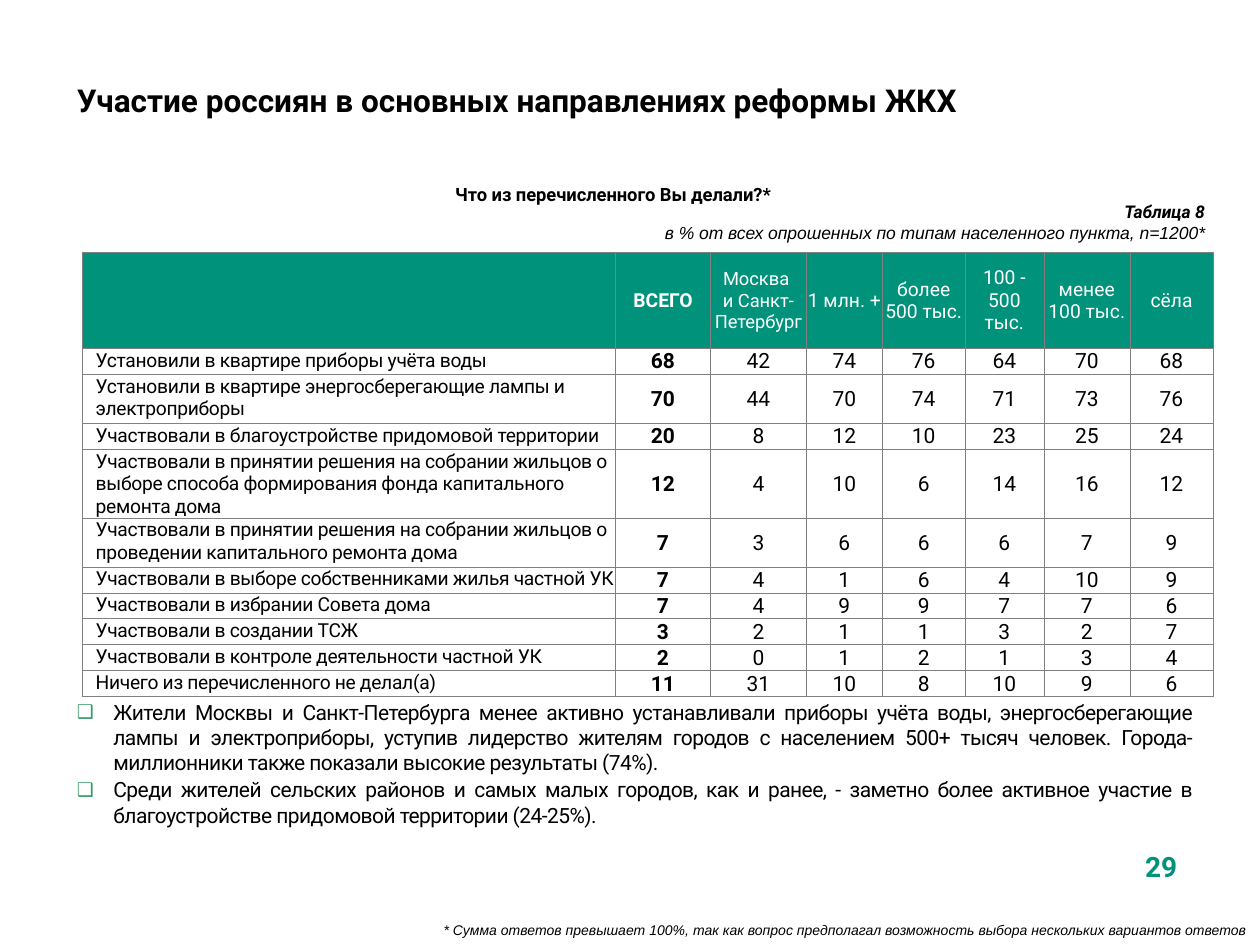
from lxml import etree
from pptx import Presentation
from pptx import util as u
from pptx.dml.color import RGBColor
from pptx.enum import text
from pptx.oxml import ns

COLUMNS, ROWS = 100, 75  # page grid
GREEN, BLACK, WHITE, GREY, LEAF = "00927B", "000000", "FFFFFF", "808080", "339966"
LEFT, CENTER, RIGHT, JUSTIFY = (text.PP_ALIGN.LEFT, text.PP_ALIGN.CENTER,
                                text.PP_ALIGN.RIGHT, text.PP_ALIGN.JUSTIFY)

TITLE = "Участие россиян в основных направлениях реформы ЖКХ"
HEADERS = ["", "ВСЕГО", "Москва \nи Санкт-Петербург", "1 млн. +", "более 500 тыс.",
           "100 - 500 тыс.", "менее 100 тыс.", "сёла"]
ANSWERS = [
    ("Установили в квартире приборы учёта воды", 68, 42, 74, 76, 64, 70, 68),
    ("Установили в квартире энергосберегающие лампы и электроприборы",
     70, 44, 70, 74, 71, 73, 76),
    ("Участвовали в благоустройстве придомовой территории", 20, 8, 12, 10, 23, 25, 24),
    ("Участвовали в принятии решения на собрании жильцов о выборе способа "
     "формирования фонда капитального ремонта дома", 12, 4, 10, 6, 14, 16, 12),
    ("Участвовали в принятии решения на собрании жильцов о проведении "
     "капитального ремонта дома", 7, 3, 6, 6, 6, 7, 9),
    ("Участвовали в выборе собственниками жилья частной УК", 7, 4, 1, 6, 4, 10, 9),
    ("Участвовали в избрании Совета дома", 7, 4, 9, 9, 7, 7, 6),
    ("Участвовали в создании ТСЖ", 3, 2, 1, 1, 3, 2, 7),
    ("Участвовали в контроле деятельности частной УК", 2, 0, 1, 2, 1, 3, 4),
    ("Ничего из перечисленного не делал(а)", 11, 31, 10, 8, 10, 9, 6),
]
TABLE_COLUMNS = [42.35, 7.55, 7.6, 6.05, 6.55, 6.25, 6.85, 6.6]
TABLE_ROWS = [7.63, 2, 3.9, 2, 3.9, 3.9, 2, 2, 2, 2, 2]
FINDINGS = [
    "Жители Москвы и Санкт-Петербурга менее активно устанавливали приборы учёта воды, "
    "энергосберегающие лампы и электроприборы, уступив лидерство жителям городов с "
    "населением 500+ тысяч человек. Города-миллионники также показали высокие "
    "результаты (74%).",
    "Среди жителей сельских районов и самых малых городов, как и ранее, - заметно более "
    "активное участие в благоустройстве придомовой территории (24-25%).",
]

deck = Presentation()
deck.slide_width, deck.slide_height = u.Inches(10), u.Inches(7.5)


def colour(value):
    return RGBColor.from_string(value)


def across(columns):
    return int(deck.slide_width * columns / COLUMNS)


def down(rows):
    return int(deck.slide_height * rows / ROWS)


def place(box):
    left, top, width, height = box
    return across(left), down(top), across(width), down(height)


def move(shape, box):
    shape.left, shape.top, shape.width, shape.height = place(box)


def assign(target, values):
    for name, value in values.items():
        setattr(target, name, value)


def write(para, words, align, size, ink=BLACK, spacing=0, **style):
    """Fill one paragraph with a single formatted run."""
    span = para.add_run()
    span.text = words
    para.alignment = align
    assign(span.font, {"name": "Roboto", "size": u.Pt(size), "bold": False, **style})
    span.font.color.rgb = colour(ink)
    if spacing:
        span.font._element.set("spc", str(round(spacing * 100)))


def paragraphs(frame, count):
    return [frame.paragraphs[0]] + [frame.add_paragraph() for _ in range(count - 1)]


def indent(para, left, first=0):
    props = para._p.get_or_add_pPr()
    props.set("marL", str(u.Inches(left)))
    props.set("indent", str(u.Inches(first)))
    return props


def add_title(page, box):
    title = page.shapes.title
    move(title, box)
    assign(title.text_frame, {"auto_size": text.MSO_AUTO_SIZE.NONE,
                              "vertical_anchor": text.MSO_ANCHOR.MIDDLE})
    write(title.text_frame.paragraphs[0], TITLE, LEFT, 18, bold=True)


def add_findings(page, box):
    body = page.placeholders[1]
    move(body, box)
    body.text_frame.auto_size = text.MSO_AUTO_SIZE.NONE
    bullet_parts = [("a:buSzPct", "val", "90000"), ("a:buFont", "typeface", "Arial"),
                    ("a:buChar", "char", "❑")]
    for index, (para, words) in enumerate(
            zip(paragraphs(body.text_frame, len(FINDINGS)), FINDINGS)):
        props = indent(para, 0.29, -0.29)
        bullet_colour = etree.SubElement(props, ns.qn("a:buClr"))
        etree.SubElement(bullet_colour, ns.qn("a:srgbClr")).set("val", LEAF)
        for tag, name, value in bullet_parts:
            etree.SubElement(props, ns.qn(tag)).set(name, value)
        para.space_before = u.Pt(1.2 if index else 0)
        write(para, words, JUSTIFY, 12, spacing=-0.3)


def add_label(page, box, lines, anchor=text.MSO_ANCHOR.TOP):
    """Lines are (words, align, size, style) tuples."""
    frame = page.shapes.add_textbox(*place(box)).text_frame
    assign(frame, {"word_wrap": True, "vertical_anchor": anchor})
    for para, (words, align, size, style) in zip(paragraphs(frame, len(lines)), lines):
        write(para, words, align, size, **style)


def border(cell):
    props = cell._tc.get_or_add_tcPr()
    for side in "LRTB":
        line = etree.SubElement(props, ns.qn(f"a:ln{side}"), w=str(u.Pt(0.25)))
        fill = etree.SubElement(line, ns.qn("a:solidFill"))
        etree.SubElement(fill, ns.qn("a:srgbClr")).set("val", GREY)


def cell_style(row, column):
    if row == 0:
        return dict(align=CENTER, size=10.5 if column == 2 else 11, ink=WHITE,
                    bold=column == 1)
    if column == 0:
        return dict(align=LEFT, size=11, spacing=-0.2)
    return dict(align=CENTER, size=12, bold=column == 1)


def add_answers(page, box):
    records = [HEADERS, *ANSWERS]
    table = page.shapes.add_table(len(records), len(HEADERS), *place(box)).table
    assign(table, {"first_row": False, "horz_banding": False})
    for column, width in zip(table.columns, TABLE_COLUMNS):
        column.width = across(width)
    for row, height in zip(table.rows, TABLE_ROWS):
        row.height = down(height)
    margin = u.Inches(0.01)
    for r, record in enumerate(records):
        for c, value in enumerate(record):
            cell = table.cell(r, c)
            is_answer = r > 0 and c == 0
            assign(cell, {"margin_left": margin,
                          "margin_right": 0 if is_answer else margin,
                          "margin_top": margin, "margin_bottom": 0,
                          "vertical_anchor": text.MSO_ANCHOR.TOP if is_answer
                          else text.MSO_ANCHOR.MIDDLE})
            border(cell)
            if r == 0:
                cell.fill.solid()
                cell.fill.fore_color.rgb = colour(GREEN)
            else:
                cell.fill.background()
            if value == "":
                continue
            lines = str(value).split("\n")
            for para, words in zip(paragraphs(cell.text_frame, len(lines)), lines):
                if is_answer:
                    indent(para, 0.1)
                write(para, words, **cell_style(r, c))


def build_survey_page():
    page = deck.slides.add_slide(deck.slide_layouts[1])
    # Title, table and findings
    add_title(page, (5.1, 4.4, 78, 7.1))
    add_findings(page, (5.1, 55, 90.6, 11.4))
    add_answers(page, (6.5, 20, 89.8, 35.7))
    # Page number and footnote
    add_label(page, (87.8, 66.9, 8.7, 5.2),
              [("29", CENTER, 16, dict(ink=GREEN, bold=True))])
    add_label(page, (6.5, 72.65, 93.5, 2.4),
              [("* Сумма ответов превышает 100%, так как вопрос предполагал возможность "
                "выбора нескольких вариантов ответов", RIGHT, 8,
                dict(name="Arial", italic=True))])
    # Table captions
    add_label(page, (38.8, 15.43, 57.8, 4.4),
              [("Таблица 8", RIGHT, 10, dict(bold=True, italic=True)),
               ("в % от всех опрошенных по типам населенного пункта, n=1200*", RIGHT, 10,
                dict(name="Arial", italic=True))])
    add_label(page, (1.2, 14.5, 95.3, 2.3),
              [("Что из перечисленного Вы делали?* ", CENTER, 10.5, dict(bold=True))],
              text.MSO_ANCHOR.BOTTOM)


if __name__ == "__main__":
    build_survey_page()
    deck.save("out.pptx")
